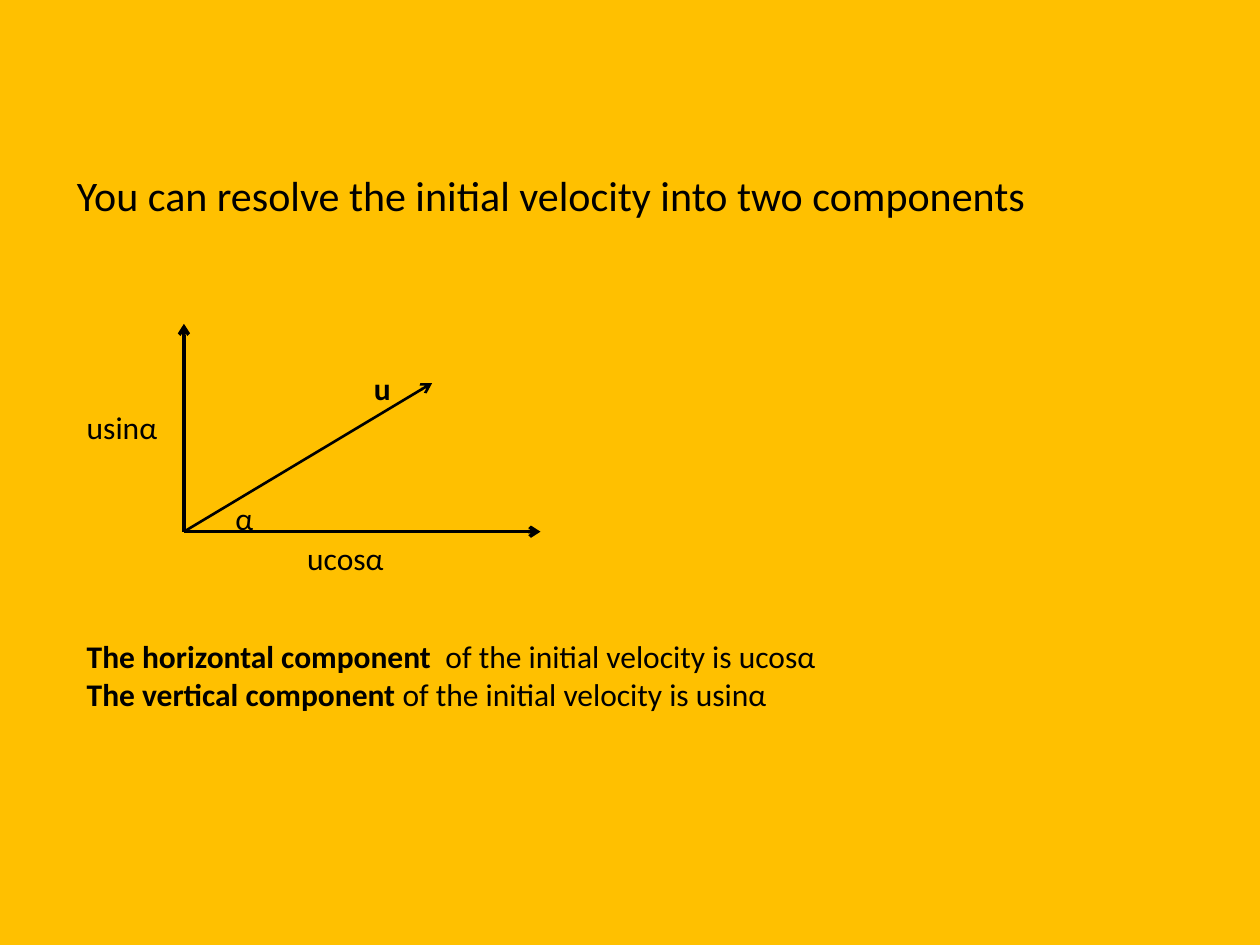
from dataclasses import dataclass

import pptx
import pptx.dml.color
import pptx.enum.shapes
import pptx.enum.text
import pptx.oxml.ns
import pptx.util
from lxml import etree

Inches = pptx.util.Inches
RGBColor = pptx.dml.color.RGBColor

BLACK = RGBColor(0x00, 0x00, 0x00)
AMBER = RGBColor(0xFF, 0xC0, 0x00)
ORIGIN = (1.46, 4.22)


@dataclass
class Run:
    text: str
    bold: bool = False


@dataclass
class Label:
    left: float
    top: float
    width: float
    height: float
    lines: list[list[Run]]


@dataclass
class Vector:
    x: float
    y: float
    weight: float


VECTORS = [
    Vector(ORIGIN[0], 2.57, 2),
    Vector(4.29, ORIGIN[1], 2),
    Vector(3.43, 3.04, 1.5),
]

LABELS = [
    Label(2.87, 2.88, 0.24, 0.4, [[Run("u", True)]]),
    Label(1.77, 3.91, 0.39, 0.4, [[Run("α")]]),
    Label(2.34, 4.23, 1.1, 0.4, [[Run("ucosα")]]),
    Label(0.59, 3.19, 1.1, 0.4, [[Run("usinα")]]),
    Label(0.59, 5.01, 8.5, 0.71, [
        [Run("The horizontal component ", True),
         Run(" of the initial velocity is ucosα")],
        [Run("The vertical component ", True),
         Run("of the initial velocity is usinα")],
    ]),
]


def add_run(p, run: Run, size: float) -> None:
    r = p.add_run()
    r.text = run.text
    font_format = {"name": "Calibri", "size": pptx.util.Pt(size), "bold": run.bold}
    for name, value in font_format.items():
        setattr(r.font, name, value)
    r.font.color.rgb = BLACK


def add_title(s, text: str) -> None:
    sp = s.shapes.title
    box = {"left": 0.51, "top": 0.92, "width": 9, "height": 1.25}
    for name, value in box.items():
        setattr(sp, name, Inches(value))
    tf = sp.text_frame
    tf.vertical_anchor = pptx.enum.text.MSO_ANCHOR.MIDDLE
    p = tf.paragraphs[0]
    p.alignment = pptx.enum.text.PP_ALIGN.LEFT
    add_run(p, Run(text), 24)


def add_vector(s, vector: Vector) -> None:
    ends = (*ORIGIN, vector.x, vector.y)
    sp = s.shapes.add_connector(
        pptx.enum.shapes.MSO_CONNECTOR.STRAIGHT, *map(Inches, ends))
    sp.line.color.rgb = BLACK
    sp.line.width = pptx.util.Pt(vector.weight)
    qn = pptx.oxml.ns.qn
    etree.SubElement(sp.line._get_or_add_ln(), qn("a:tailEnd"), type="arrow")
    etree.SubElement(sp._element.spPr, qn("a:effectLst"))


def add_label(s, label: Label) -> None:
    box = (label.left, label.top, label.width, label.height)
    tf = s.shapes.add_textbox(*map(Inches, box)).text_frame
    frame_format = {
        "word_wrap": True,
        "auto_size": pptx.enum.text.MSO_AUTO_SIZE.SHAPE_TO_FIT_TEXT,
    }
    for name, value in frame_format.items():
        setattr(tf, name, value)
    for i, line in enumerate(label.lines):
        p = tf.add_paragraph() if i else tf.paragraphs[0]
        for run in line:
            add_run(p, run, 18)


def main() -> None:
    prs = pptx.Presentation()
    prs.slide_width, prs.slide_height = Inches(10), Inches(7.5)
    s = prs.slides.add_slide(prs.slide_layouts[5])
    s.background.fill.solid()
    s.background.fill.fore_color.rgb = AMBER
    add_title(s, "You can resolve the initial velocity into two components")
    for vector in VECTORS:
        add_vector(s, vector)
    for label in LABELS:
        add_label(s, label)
    prs.save("out.pptx")


if __name__ == "__main__":
    main()
